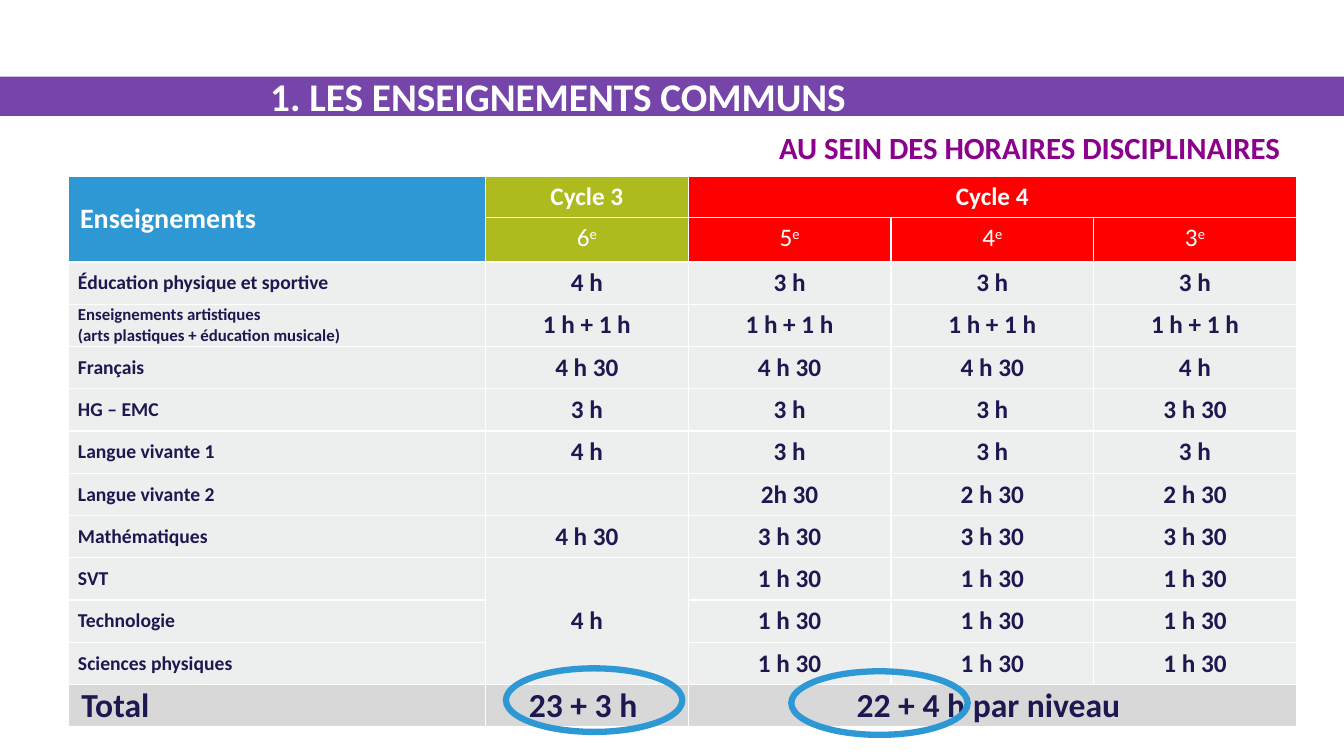
from lxml.etree import SubElement
from pptx import Presentation
from pptx.dml.color import RGBColor
from pptx.enum.shapes import MSO_SHAPE
from pptx.enum.text import MSO_ANCHOR, MSO_AUTO_SIZE, PP_ALIGN
from pptx.oxml import parse_xml
from pptx.oxml.ns import nsdecls, qn
from pptx.util import Pt

COLORS = {
    "white": "FFFFFF", "violet": "7545A9", "purple": "8B008C", "blue": "2E98D5",
    "green": "ADBB1F", "red": "FF0000", "navy": "1C1850", "silver": "C6C7C9",
    "gray": "7F7F7F",
}
SUBJECTS = [
    ("Éducation physique et sportive", "4 h", "3 h", "3 h", "3 h"),
    ("Enseignements artistiques\n(arts plastiques + éducation musicale)",
     "1 h + 1 h", "1 h + 1 h", "1 h + 1 h", "1 h + 1 h"),
    ("Français", "4 h 30", "4 h 30", "4 h 30", "4 h"),
    ("HG – EMC", "3 h", "3 h", "3 h", "3 h 30"),
    ("Langue vivante 1", "4 h", "3 h", "3 h", "3 h"),
    ("Langue vivante 2", "", "2h 30", "2 h 30", "2 h 30"),
    ("Mathématiques", "4 h 30", "3 h 30", "3 h 30", "3 h 30"),
    ("SVT", "4 h", "1 h 30", "1 h 30", "1 h 30"),
    ("Technologie", "", "1 h 30", "1 h 30", "1 h 30"),
    ("Sciences physiques", "", "1 h 30", "1 h 30", "1 h 30"),
]


def rgb(name):
    return RGBColor.from_string(COLORS[name])


def write_text(frame, text, size=18, color="navy", bold=True,
               align=PP_ALIGN.LEFT, superscript="", font="Calibri"):
    for index, line in enumerate(text.split("\n")):
        para = frame.add_paragraph() if index else frame.paragraphs[0]
        para.alignment = align
        for part in filter(None, (line, superscript)):
            span = para.add_run()
            span.text = part
            span.font.name = font
            span.font.size = Pt(size)
            span.font.bold = bold
            span.font.color.rgb = rgb(color)
            if part == superscript:
                span._r.get_or_add_rPr().set("baseline", "30000")


class SlideBuilder:
    def __init__(self, deck):
        self.page = deck.slides.add_slide(deck.slide_layouts[5])
        self.shapes = self.page.shapes

    def band(self, left, top, width, height, color):
        box = self.shapes.add_shape(
            MSO_SHAPE.RECTANGLE, Pt(left), Pt(top), Pt(width), Pt(height))
        box.shadow.inherit = False
        box.fill.solid()
        box.fill.fore_color.rgb = rgb(color)
        box.line.fill.background()
        self.shapes._spTree.insert(2, box._element)

    def title(self, text, left, top, width, height):
        box = self.shapes.title
        box.left, box.top, box.width, box.height = map(Pt, (left, top, width, height))
        frame = box.text_frame
        frame.auto_size = MSO_AUTO_SIZE.NONE
        frame.vertical_anchor = MSO_ANCHOR.MIDDLE
        write_text(frame, text, size=28, color="white")

    def label(self, text, left, top, width, height, **style):
        box = self.shapes.add_textbox(Pt(left), Pt(top), Pt(width), Pt(height))
        frame = box.text_frame
        frame.word_wrap = True
        frame.margin_left = frame.margin_right = 0
        frame.margin_top = frame.margin_bottom = 0
        write_text(frame, text, **style)

    def ring(self, left, top, width, height, color):
        oval = self.shapes.add_shape(
            MSO_SHAPE.OVAL, Pt(left), Pt(top), Pt(width), Pt(height))
        oval.shadow.inherit = False
        oval.fill.background()
        oval.line.color.rgb = rgb(color)
        oval.line.width = Pt(4.5)

    def table(self, left, top, widths, heights):
        frame = self.shapes.add_table(
            len(heights), len(widths), Pt(left), Pt(top), Pt(sum(widths)), Pt(sum(heights)))
        grid = frame.table
        grid.first_row = grid.horz_banding = False
        for column, width in zip(grid.columns, widths):
            column.width = Pt(width)
        for row, height in zip(grid.rows, heights):
            row.height = Pt(height)
        return grid

    def cell(self, cell, text, fill, alpha=100, inset=0, left=3.6, right=3.6,
             anchor=MSO_ANCHOR.MIDDLE, **style):
        cell.margin_left, cell.margin_right = Pt(left), Pt(right)
        cell.margin_top = cell.margin_bottom = Pt(inset)
        cell.vertical_anchor = anchor
        cell.fill.solid()
        cell.fill.fore_color.rgb = rgb(fill)
        properties = cell._tc.get_or_add_tcPr()
        if alpha < 100:
            tint = properties.find(qn("a:solidFill")).find(qn("a:srgbClr"))
            SubElement(tint, qn("a:alpha")).set("val", str(alpha * 1000))
        for index, side in enumerate(("lnL", "lnR", "lnT", "lnB")):
            properties.insert(index, parse_xml(
                f'<a:{side} {nsdecls("a")} w="12700"><a:solidFill>'
                f'<a:srgbClr val="{COLORS["white"]}"/></a:solidFill></a:{side}>'))
        write_text(cell.text_frame, text, **style)

    def timetable(self):
        grid = self.table(49.2, 126.2, [297.6] + [144.8] * 4, [28.1] * 2 + [30.2] * 11)
        last = len(SUBJECTS) + 2
        for start, end in [((0, 0), (1, 0)), ((0, 2), (0, 4)),
                           ((9, 1), (11, 1)), ((last, 2), (last, 4))]:
            grid.cell(*start).merge(grid.cell(*end))

        head = {"inset": 3.6, "color": "white"}
        center = {"align": PP_ALIGN.CENTER}
        cycles = ["Cycle 3", "Cycle 4", "", ""]
        for row in range(2):
            self.cell(grid.cell(row, 0), "" if row else "Enseignements", "blue",
                      left=8, size=20, **head)
            for column, (cycle, level) in enumerate(zip(cycles, "6543"), 1):
                self.cell(grid.cell(row, column), level if row else cycle,
                          "green" if column == 1 else "red", anchor=MSO_ANCHOR.TOP,
                          bold=row == 0, superscript="e" if row else "", **head, **center)

        for row, (subject, *hours) in enumerate(SUBJECTS, 2):
            self.cell(grid.cell(row, 0), subject, "silver", alpha=30, left=6.5,
                      size=12 if "\n" in subject else 14)
            for column, value in enumerate(hours, 1):
                self.cell(grid.cell(row, column), value, "silver", alpha=30, **center)

        totals = ["23 + 3 h", "22 + 4 h par niveau", "", ""]
        self.cell(grid.cell(last, 0), "Total", "gray", alpha=30, left=9, size=24)
        for column, value in enumerate(totals, 1):
            self.cell(grid.cell(last, column), value, "gray", alpha=30, right=9,
                      size=24, **center)


def main():
    deck = Presentation()
    deck.slide_width, deck.slide_height = Pt(960), Pt(540)
    slide = SlideBuilder(deck)
    slide.band(0, 54.7, 960, 28.1, "violet")
    slide.title("1. LES ENSEIGNEMENTS COMMUNS", 185.8, 31.7, 717.8, 73.4)
    slide.timetable()
    for left, top in [(565.2, 479.5), (361.4, 477.4)]:
        slide.ring(left, top, 126, 45.4, "blue")
    slide.label("AU SEIN DES HORAIRES DISCIPLINAIRES", 22.3, 92.2, 892.1, 33.1,
                size=22, color="purple", align=PP_ALIGN.RIGHT)
    deck.save("out.pptx")


if __name__ == "__main__":
    main()
